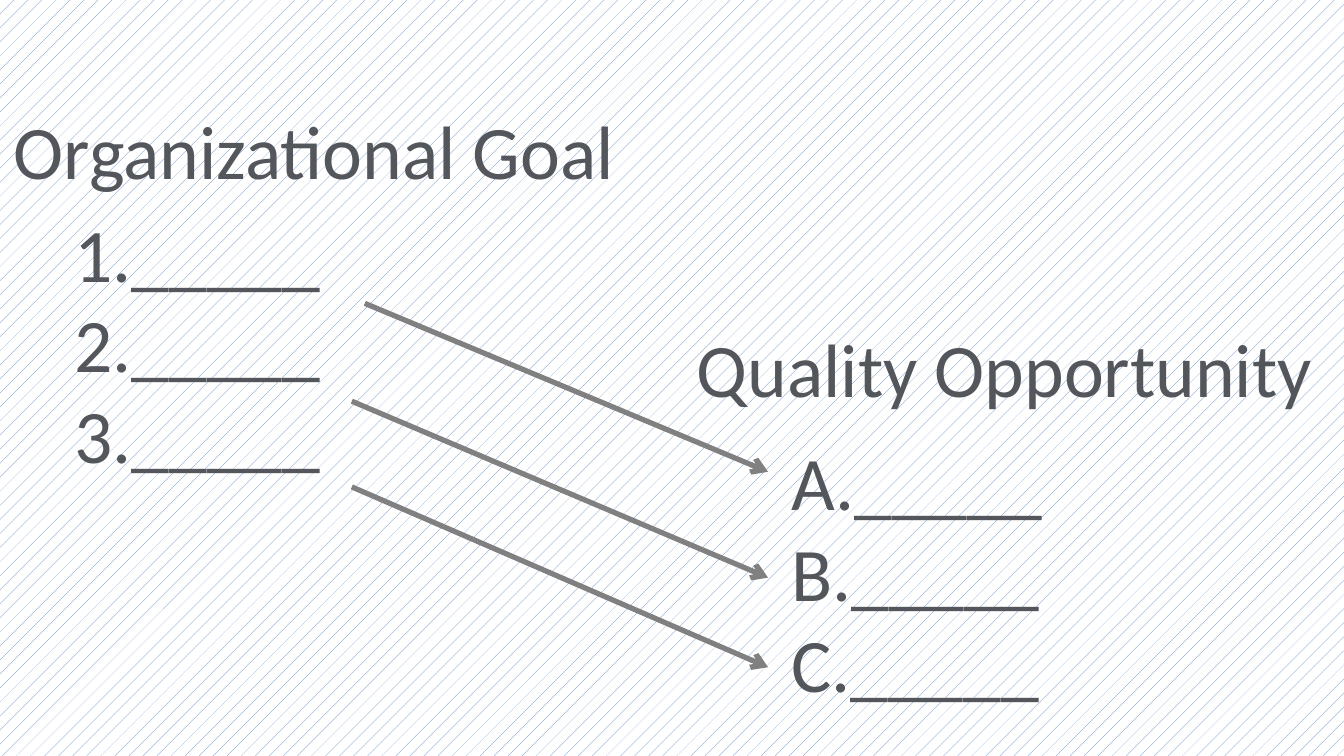
from dataclasses import dataclass

from lxml import etree
from pptx import Presentation
from pptx.dml.color import RGBColor
from pptx.enum.dml import MSO_PATTERN
from pptx.enum.shapes import MSO_CONNECTOR
from pptx.enum.text import MSO_ANCHOR, MSO_AUTO_SIZE, PP_ALIGN
from pptx.oxml.ns import qn
from pptx.slide import Slide
from pptx.util import Pt

PERCENT_5 = MSO_PATTERN.PERCENT_5
STRAIGHT = MSO_CONNECTOR.STRAIGHT
TOP = MSO_ANCHOR.TOP
FIT_SHAPE = MSO_AUTO_SIZE.SHAPE_TO_FIT_TEXT
LEFT, CENTER = PP_ALIGN.LEFT, PP_ALIGN.CENTER

COLORS = {"text": "53575C", "arrow": "808080", "hatch": "4F81BD", "paper": "FFFFFF"}
FONT_NAME = "Calibri"
FONT_SIZE = 54
COMPARISON_LAYOUT = 4
UNUSED_HEADING = 1
BLANK = "_" * 5


@dataclass(frozen=True)
class TextBlock:
    placeholder: int
    lines: list[str]
    left: float
    top: float
    width: float
    height: float
    align: PP_ALIGN
    wrap: bool


@dataclass(frozen=True)
class Link:
    start: tuple[float, float]
    end: tuple[float, float]


def heading(placeholder: int, text: str, left: float, top: float, width: float) -> TextBlock:
    return TextBlock(placeholder, [text], left, top, width, 72.7, CENTER, False)


def blanks(placeholder: int, labels: str, left: float, top: float) -> TextBlock:
    lines = [f"{label}.{BLANK}" for label in labels]
    return TextBlock(placeholder, lines, left, top, 196.6, 203.8, LEFT, True)


TEXT_BLOCKS = [
    heading(3, "Quality Opportunity", 488.2, 226.1, 458.6),
    heading(0, "Organizational Goal", 0, 70.6, 448.6),
    blanks(2, "123", 46.1, 144),
    blanks(4, "ABC", 558, 307.4),
]

LINKS = [
    Link((260.6, 216.7), (548.6, 337)),
    Link((251.3, 286.6), (548.6, 412.6)),
    Link((251.3, 347.8), (548.6, 476.6)),
]


def color(name: str) -> RGBColor:
    return RGBColor.from_string(COLORS[name])


def paint_background(slide: Slide) -> None:
    fill = slide.background.fill
    fill.patterned()
    fill.pattern = PERCENT_5
    fill.fore_color.rgb = color("hatch")
    fill.back_color.rgb = color("paper")


def write_block(slide: Slide, block: TextBlock) -> None:
    holder = next(
        item for item in slide.placeholders
        if item.placeholder_format.idx == block.placeholder
    )
    holder.left, holder.top = Pt(block.left), Pt(block.top)
    holder.width, holder.height = Pt(block.width), Pt(block.height)
    frame = holder.text_frame
    frame.text = "\n".join(block.lines)
    frame.word_wrap = block.wrap
    frame.auto_size = FIT_SHAPE
    frame.vertical_anchor = TOP
    for paragraph in frame.paragraphs:
        paragraph.alignment = block.align
        paragraph.space_before = Pt(0)
        properties = paragraph._p.get_or_add_pPr()
        properties.set("marL", "0")
        properties.set("indent", "0")
        etree.SubElement(properties, qn("a:buNone"))
        font = paragraph.font
        font.name = FONT_NAME
        font.size = Pt(FONT_SIZE)
        font.bold = False
        font.color.rgb = color("text")


def draw_link(slide: Slide, link: Link) -> None:
    arrow = slide.shapes.add_connector(
        STRAIGHT, *(Pt(length) for length in link.start + link.end)
    )
    arrow.line.color.rgb = color("arrow")
    arrow.line.width = Pt(3.75)
    etree.SubElement(arrow.line._get_or_add_ln(), qn("a:tailEnd"), type="arrow")
    etree.SubElement(arrow._element.spPr, qn("a:effectLst"))


def main() -> None:
    deck = Presentation()
    deck.slide_width, deck.slide_height = Pt(960), Pt(540)
    slide = deck.slides.add_slide(deck.slide_layouts[COMPARISON_LAYOUT])
    paint_background(slide)
    for block in TEXT_BLOCKS:
        write_block(slide, block)
    for holder in list(slide.placeholders):
        if holder.placeholder_format.idx == UNUSED_HEADING:
            holder._element.getparent().remove(holder._element)
    for link in LINKS:
        draw_link(slide, link)
    deck.save("out.pptx")


if __name__ == "__main__":
    main()
